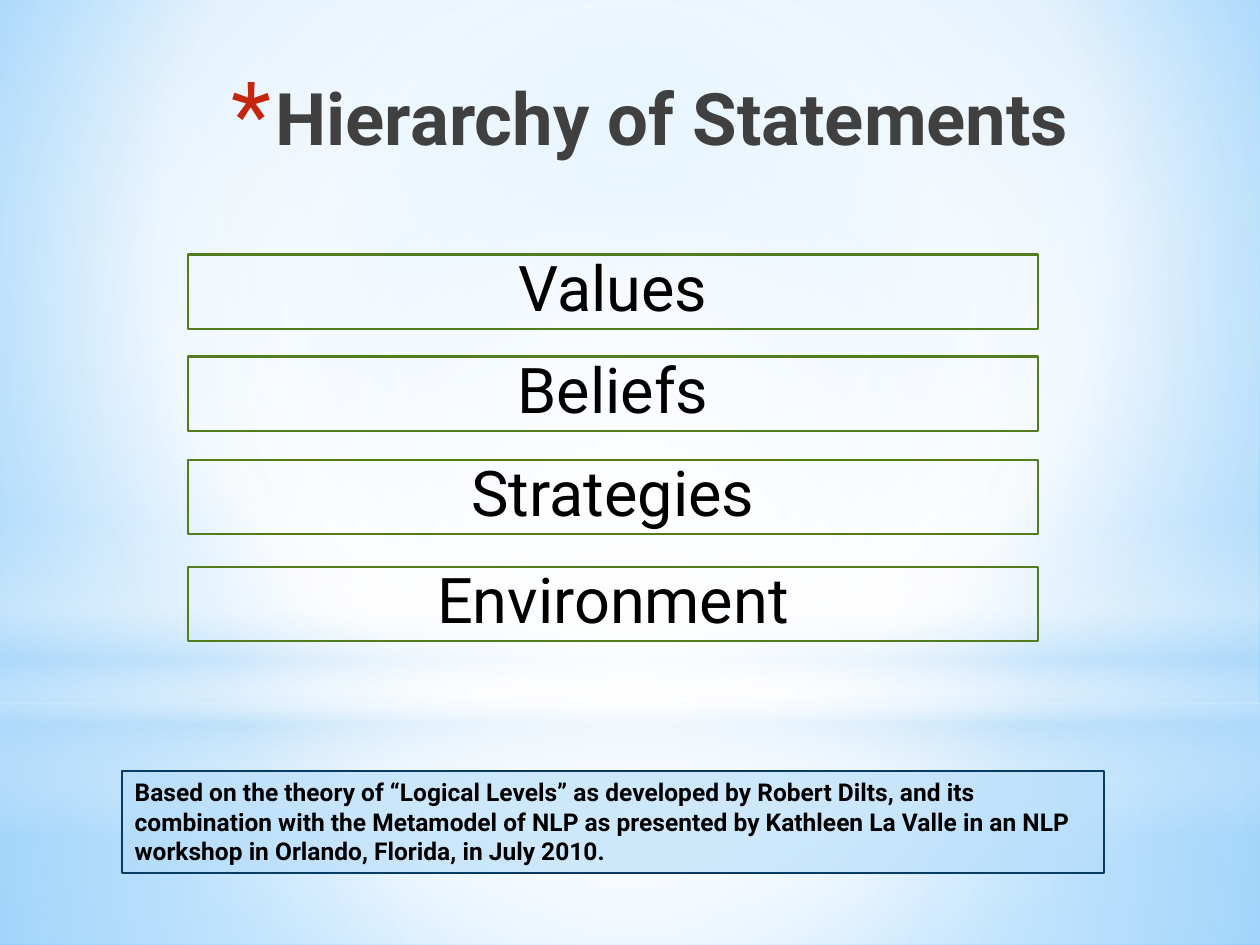
from lxml import etree
from pptx import Presentation
from pptx.dml.color import RGBColor
from pptx.enum import shapes, text
from pptx.oxml import ns
from pptx.util import Inches, Pt

WHITE = RGBColor(0xFF, 0xFF, 0xFF)
BLACK = RGBColor(0, 0, 0)
PALE = RGBColor(0xB4, 0xDC, 0xFA)
SKY = RGBColor(0x9E, 0xD5, 0xFF)
AZURE = RGBColor(0x5B, 0xB9, 0xFF)
GREEN = RGBColor(0x53, 0x7C, 0x1F)
NAVY = RGBColor(0x07, 0x3C, 0x65)
GREY = RGBColor(0x40, 0x40, 0x40)
RED = RGBColor(0xC3, 0x26, 0x0C)
FONT = "Roboto"
CENTER = (50, 50, 50, 50)
RECTANGLE = shapes.MSO_SHAPE.RECTANGLE


def child(parent, tag, **attributes):
    element = etree.SubElement(parent, ns.qn(tag))
    for name, value in attributes.items():
        element.set(name, str(value))
    return element


def add_color(parent, color, opacity=100):
    element = child(parent, "a:srgbClr", val=color)
    if opacity < 100:
        child(element, "a:alpha", val=opacity * 1000)


def apply_gradient(owner, stops, focus=None):
    solid = next(owner.iter(ns.qn("a:solidFill")))
    gradient = etree.Element(ns.qn("a:gradFill"), rotWithShape="1")
    stop_list = child(gradient, "a:gsLst")
    for position, color, opacity in stops:
        add_color(child(stop_list, "a:gs", pos=position * 1000), color, opacity)
    if focus:
        circle = child(gradient, "a:path", path="circle")
        sides = {side: value * 1000 for side, value in zip("ltrb", focus)}
        child(circle, "a:fillToRect", **sides)
    else:
        child(gradient, "a:lin", ang=90 * 60000, scaled=0)
    solid.getparent().replace(solid, gradient)


def add_panel(page, box, kind=RECTANGLE, line=None):
    panel = page.shapes.add_shape(kind, *map(Inches, box))
    panel.shadow.inherit = False
    panel.fill.background()
    if line is None:
        panel.line.fill.background()
    else:
        panel.line.color.rgb = line
        panel.line.width = Pt(1.25)
    return panel


def write(para, words, size, color, bold=False):
    span = para.add_run()
    span.text = words
    span.font.name = FONT
    span.font.size = Pt(size)
    span.font.bold = bold
    span.font.color.rgb = color


def add_backdrop(page, box):
    left, top, width, height = box
    page.background.fill.solid()
    apply_gradient(page.background._cSld,
                   [(0, SKY, 100), (60, WHITE, 100), (100, AZURE, 100)], (20, 10, 20, 60))
    horizon = 5.58
    layers = [
        (horizon, height - horizon, RECTANGLE, CENTER,
         [(0, WHITE, 91), (37, WHITE, 76), (100, PALE, 79)]),
        (0, horizon, RECTANGLE, CENTER,
         [(0, WHITE, 89), (48, WHITE, 62), (100, PALE, 79)]),
        (4.12, 2.5, RECTANGLE, None,
         [(0, WHITE, 0), (29, WHITE, 30), (45, PALE, 40),
          (55, WHITE, 26), (65, PALE, 60), (100, WHITE, 0)]),
        (1.52, 6.35, shapes.MSO_SHAPE.OVAL, CENTER,
         [(0, WHITE, 100), (56, WHITE, 0)]),
    ]
    for offset, depth, kind, focus, stops in layers:
        layer = add_panel(page, (left, top + offset, width, depth), kind)
        layer.fill.solid()
        apply_gradient(layer.element, stops, focus)


def add_title(page, box):
    title = page.shapes.title
    page.shapes.element.append(title.element)
    title.left, title.top, title.width, title.height = map(Inches, box)
    frame = title.text_frame
    frame.word_wrap = True
    frame.vertical_anchor = text.MSO_ANCHOR.TOP
    para = frame.paragraphs[0]
    para.alignment = text.PP_ALIGN.RIGHT
    properties = para._p.get_or_add_pPr()
    properties.set("marL", str(Inches(0.35)))
    properties.set("indent", str(-Inches(0.35)))
    add_color(child(properties, "a:buClr"), RED)
    child(properties, "a:buSzPct", val=128000)
    child(properties, "a:buFont", typeface=FONT)
    child(properties, "a:buChar", char="*")
    write(para, "Hierarchy of Statements", 41.4, GREY, bold=True)


def add_level(page, box, name, label_width):
    left, top, width, height = box
    add_panel(page, box, line=GREEN)
    label_left = left + (width - label_width) / 2
    label = page.shapes.add_textbox(
        *map(Inches, (label_left, top - 0.1, label_width, 0.71)))
    frame = label.text_frame
    frame.word_wrap = True
    frame.auto_size = text.MSO_AUTO_SIZE.SHAPE_TO_FIT_TEXT
    para = frame.paragraphs[0]
    para.alignment = text.PP_ALIGN.CENTER
    write(para, name, 36, BLACK)


def add_levels(page, box):
    left, top, width, height = box
    levels = [("Values", 0, 2.5), ("Beliefs", 0.81, 2.7),
              ("Strategies", 1.63, 4.14), ("Environment", 2.48, 5.09)]
    for name, offset, label_width in levels:
        add_level(page, (left, top + offset, width, height), name, label_width)


def add_citation(page, box):
    panel = add_panel(page, box, line=NAVY)
    panel.fill.solid()
    panel.fill.fore_color.rgb = PALE
    color = next(panel.element.iter(ns.qn("a:srgbClr")))
    child(color, "a:alpha", val=62000)
    frame = panel.text_frame
    frame.word_wrap = True
    frame.auto_size = text.MSO_AUTO_SIZE.SHAPE_TO_FIT_TEXT
    frame.vertical_anchor = text.MSO_ANCHOR.TOP
    para = frame.paragraphs[0]
    para.alignment = text.PP_ALIGN.LEFT
    write(para, "Based on the theory of “Logical Levels” as developed by Robert Dilts, "
          "and its combination with the Metamodel of NLP as presented by Kathleen La Valle "
          "in an NLP workshop in Orlando, Florida, in July 2010.", 14, BLACK, bold=True)


def main():
    deck = Presentation()
    deck.slide_width, deck.slide_height = Inches(10), Inches(7.5)
    page = deck.slides.add_slide(deck.slide_layouts.get_by_name("Title Only"))
    add_backdrop(page, (0, 0, 10, 7.5))
    add_title(page, (1.46, 0.53, 7.12, 1.25))
    add_levels(page, (1.49, 2.02, 6.75, 0.59))
    add_citation(page, (0.97, 6.12, 7.79, 0.81))
    deck.save("out.pptx")


if __name__ == "__main__":
    main()
